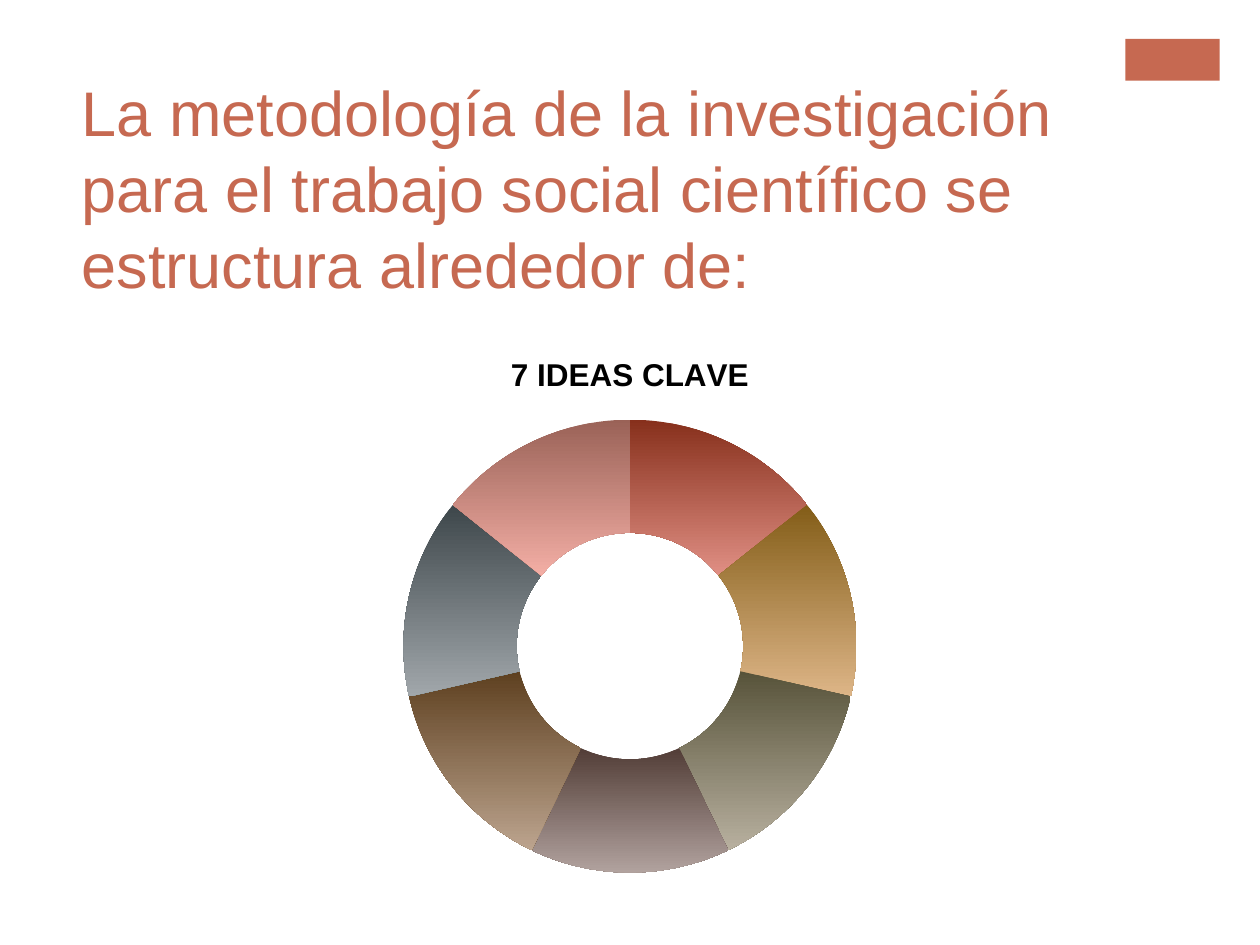
import pptx
import pptx.util
import pptx.dml.color
import pptx.chart.data
import pptx.enum.chart
import pptx.enum.shapes
import pptx.enum.text

Pt = pptx.util.Pt

HEADING = "La metodología de la investigación para el trabajo social científico se estructura alrededor de:"
CHART_TITLE = "7 IDEAS CLAVE"
SLICE_VALUE = 14
SLICE_GRADIENTS = [
    ("87301C", "E08F84"),
    ("835D18", "DDB587"),
    ("57533A", "B8B09F"),
    ("523D37", "B1A29E"),
    ("5E4020", "BCA48E"),
    ("3E474B", "A1A7AB"),
    ("9A6257", "F3AEA5"),
]
ACCENT = "C66951"
HEADING_FONT = {"name": "Arial", "size": Pt(36)}
CHART_FONT = {"name": "Arial", "size": Pt(18)}
TITLE_FONT = {**CHART_FONT, "bold": True}


def color(value):
    return pptx.dml.color.RGBColor.from_string(value)


def set_format(target, values):
    for name, value in values.items():
        setattr(target, name, value)


def set_font(font, values, hex_color):
    set_format(font, values)
    font.color.rgb = color(hex_color)


def add_accent(slide):
    shape = slide.shapes.add_shape(
        pptx.enum.shapes.MSO_SHAPE.RECTANGLE, Pt(643), Pt(22.3), Pt(54), Pt(23.8))
    shape.shadow.inherit = False
    shape.fill.solid()
    shape.fill.fore_color.rgb = color(ACCENT)
    shape.line.fill.background()


def add_chart(slide):
    data = pptx.chart.data.CategoryChartData()
    data.categories = [str(number + 1) for number in range(len(SLICE_GRADIENTS))]
    data.add_series(CHART_TITLE, [SLICE_VALUE] * len(SLICE_GRADIENTS))
    chart = slide.shapes.add_chart(
        pptx.enum.chart.XL_CHART_TYPE.DOUGHNUT,
        Pt(120), Pt(188.6), Pt(480), Pt(320), data).chart
    set_font(chart.font, CHART_FONT, "000000")
    set_format(chart, {"has_legend": False, "has_title": True})
    title = chart.chart_title.text_frame
    title.text = CHART_TITLE
    set_font(title.paragraphs[0].runs[0].font, TITLE_FONT, "000000")
    plot = chart.plots[0]
    set_format(plot, {"vary_by_categories": True, "has_data_labels": False})
    for index, gradient in enumerate(SLICE_GRADIENTS):
        slice_format = plot.series[0].points[index].format
        slice_format.line.fill.background()
        slice_format.fill.gradient()
        slice_format.fill.gradient_angle = 270
        for stop, hex_color in zip(slice_format.fill.gradient_stops, gradient):
            stop.color.rgb = color(hex_color)


def add_heading(slide):
    frame = slide.shapes.add_textbox(Pt(39.6), Pt(38.2), Pt(594.7), Pt(87.8)).text_frame
    set_format(frame, {
        "word_wrap": True,
        "vertical_anchor": pptx.enum.text.MSO_ANCHOR.TOP,
    })
    paragraph = frame.paragraphs[0]
    paragraph.line_spacing = Pt(43.4)
    run = paragraph.add_run()
    run.text = HEADING
    set_font(run.font, HEADING_FONT, ACCENT)


def main():
    presentation = pptx.Presentation()
    set_format(presentation, {"slide_width": Pt(720), "slide_height": Pt(540)})
    slide = presentation.slides.add_slide(presentation.slide_layouts[6])
    add_accent(slide)
    add_chart(slide)
    add_heading(slide)
    presentation.save("out.pptx")


if __name__ == "__main__":
    main()
